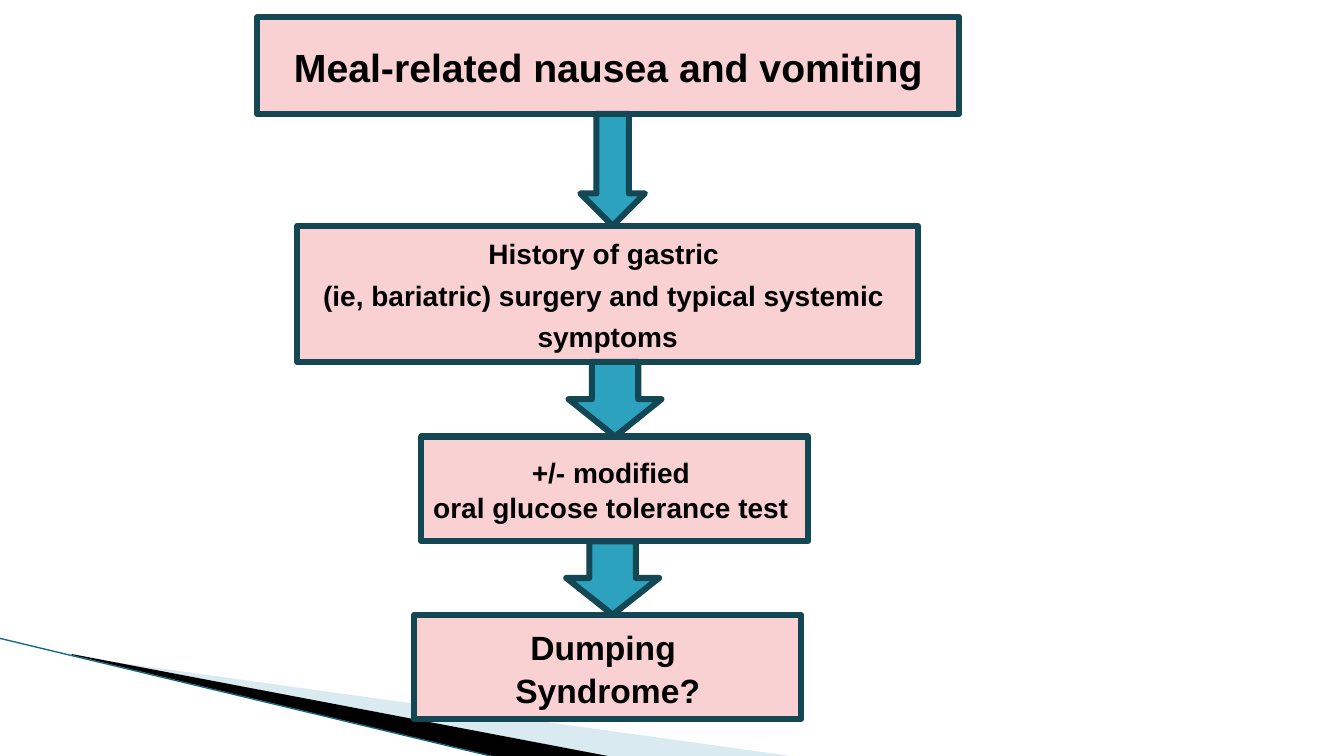
from dataclasses import dataclass

from lxml import etree
from pptx import Presentation
from pptx.dml.color import RGBColor
from pptx.enum.shapes import MSO_CONNECTOR, MSO_SHAPE
from pptx.enum.text import MSO_ANCHOR, MSO_AUTO_SIZE, PP_ALIGN
from pptx.oxml.ns import qn
from pptx.util import Cm, Pt

RECTANGLE, DOWN_ARROW = MSO_SHAPE.RECTANGLE, MSO_SHAPE.DOWN_ARROW
STRAIGHT = MSO_CONNECTOR.STRAIGHT
MIDDLE, CENTER, NO_AUTOFIT = MSO_ANCHOR.MIDDLE, PP_ALIGN.CENTER, MSO_AUTO_SIZE.NONE


@dataclass(frozen=True)
class Theme:
    font: str = "Arial"
    text: str = "000000"
    box: str = "F9D1D3"
    arrow: str = "2DA2BF"
    outline: str = "144754"
    pale_wedge: str = "A0CBDC"
    dark_wedge: str = "000000"
    sweep: str = "12697F"
    outline_width: float = 4.33
    sweep_width: float = 0.95
    title_size: int = 28
    step_size: int = 20
    outcome_size: int = 24
    line_spacing: float = 1.06


THEME = Theme()

# Lengths are centimetres; a step's frame is left, top, width, height.
STEPS = [
    {"lines": ["Meal-related nausea and vomiting"],
     "frame": (6.48, 0.43, 17.7, 2.44), "size": THEME.title_size, "gap": 0},
    {"lines": ["History of gastric ",
               "(ie, bariatric) surgery and typical systemic ",
               "symptoms"],
     "frame": (7.49, 5.69, 15.65, 3.43), "size": THEME.step_size, "gap": 4},
    {"lines": ["+/- modified ", "oral glucose tolerance test "],
     "frame": (10.62, 11, 9.75, 2.64), "size": THEME.step_size, "gap": 0},
    {"lines": ["Dumping ", "Syndrome?"],
     "frame": (10.44, 15.49, 9.75, 2.64), "size": THEME.outcome_size, "gap": 0},
]
ARROWS = [(15.44, 1.63), (15.5, 2.34), (15.44, 2.34)]  # centre x, width
WEDGES = [
    (THEME.pale_wedge, 40, [(1.85, 16.54), (20.14, 19.08), (15.44, 19.08), (1.85, 16.51)]),
    (THEME.dark_wedge, 100, [(1.8, 16.48), (15.47, 19.08), (12.6, 19.1), (1.83, 16.51)]),
]
SWEEP = (-0.03, 16.08, 12.57, 19.1)


def rgb(code):
    return RGBColor.from_string(code)


def apply(target, formats):
    for name, value in formats.items():
        setattr(target, name, value)


def paint(shape, fill):
    shape.fill.solid()
    shape.fill.fore_color.rgb = rgb(fill)
    shape.line.color.rgb = rgb(THEME.outline)
    shape.line.width = Pt(THEME.outline_width)


def write(box, step):
    frame = box.text_frame
    apply(frame, {"word_wrap": True, "auto_size": NO_AUTOFIT, "vertical_anchor": MIDDLE})
    for index, line in enumerate(step["lines"]):
        para = frame.add_paragraph() if index else frame.paragraphs[0]
        apply(para, {"alignment": CENTER, "space_before": Pt(step["gap"]),
                     "line_spacing": THEME.line_spacing})
        span = para.add_run()
        span.text = line
        apply(span.font, {"name": THEME.font, "size": Pt(step["size"]), "bold": True})
        span.font.color.rgb = rgb(THEME.text)


def draw_wedge(page, color, opacity, points):
    corners = [(Cm(x), Cm(y)) for x, y in points]
    builder = page.shapes.build_freeform(*corners[0])
    builder.add_line_segments(corners[1:], close=True)
    wedge = builder.convert_to_shape()
    wedge.shadow.inherit = False
    wedge.fill.solid()
    wedge.fill.fore_color.rgb = rgb(color)
    wedge.line.fill.background()
    if opacity < 100:
        tint = wedge.fill._xPr.find(f".//{qn('a:srgbClr')}")
        etree.SubElement(tint, qn("a:alpha")).set("val", str(opacity * 1000))


def draw_sweep(page):
    sweep = page.shapes.add_connector(STRAIGHT, *map(Cm, SWEEP))
    sweep.line.color.rgb = rgb(THEME.sweep)
    sweep.line.width = Pt(THEME.sweep_width)
    etree.SubElement(sweep._element.spPr, qn("a:effectLst"))


def draw_step(page, step, is_title):
    frame = [Cm(length) for length in step["frame"]]
    if is_title:
        box = page.shapes.title
        apply(box, dict(zip(("left", "top", "width", "height"), frame)))
    else:
        box = page.shapes.add_shape(RECTANGLE, *frame)
        box.shadow.inherit = False
    paint(box, THEME.box)
    write(box, step)


def draw_arrow(page, center, width, upper, lower):
    """Span the gap between two step frames."""
    top = upper[1] + upper[3]
    arrow = page.shapes.add_shape(DOWN_ARROW, Cm(center - width / 2), Cm(top),
                                  Cm(width), Cm(lower[1] - top))
    arrow.shadow.inherit = False
    paint(arrow, THEME.arrow)


def main():
    deck = Presentation()
    deck.slide_width, deck.slide_height = Cm(33.87), Cm(19.05)
    page = deck.slides.add_slide(deck.slide_layouts[5])
    for wedge in WEDGES:
        draw_wedge(page, *wedge)
    draw_sweep(page)
    for index, step in enumerate(STEPS):
        if index:
            draw_arrow(page, *ARROWS[index - 1], STEPS[index - 1]["frame"], step["frame"])
        draw_step(page, step, is_title=index == 0)
    deck.save("out.pptx")


if __name__ == "__main__":
    main()
